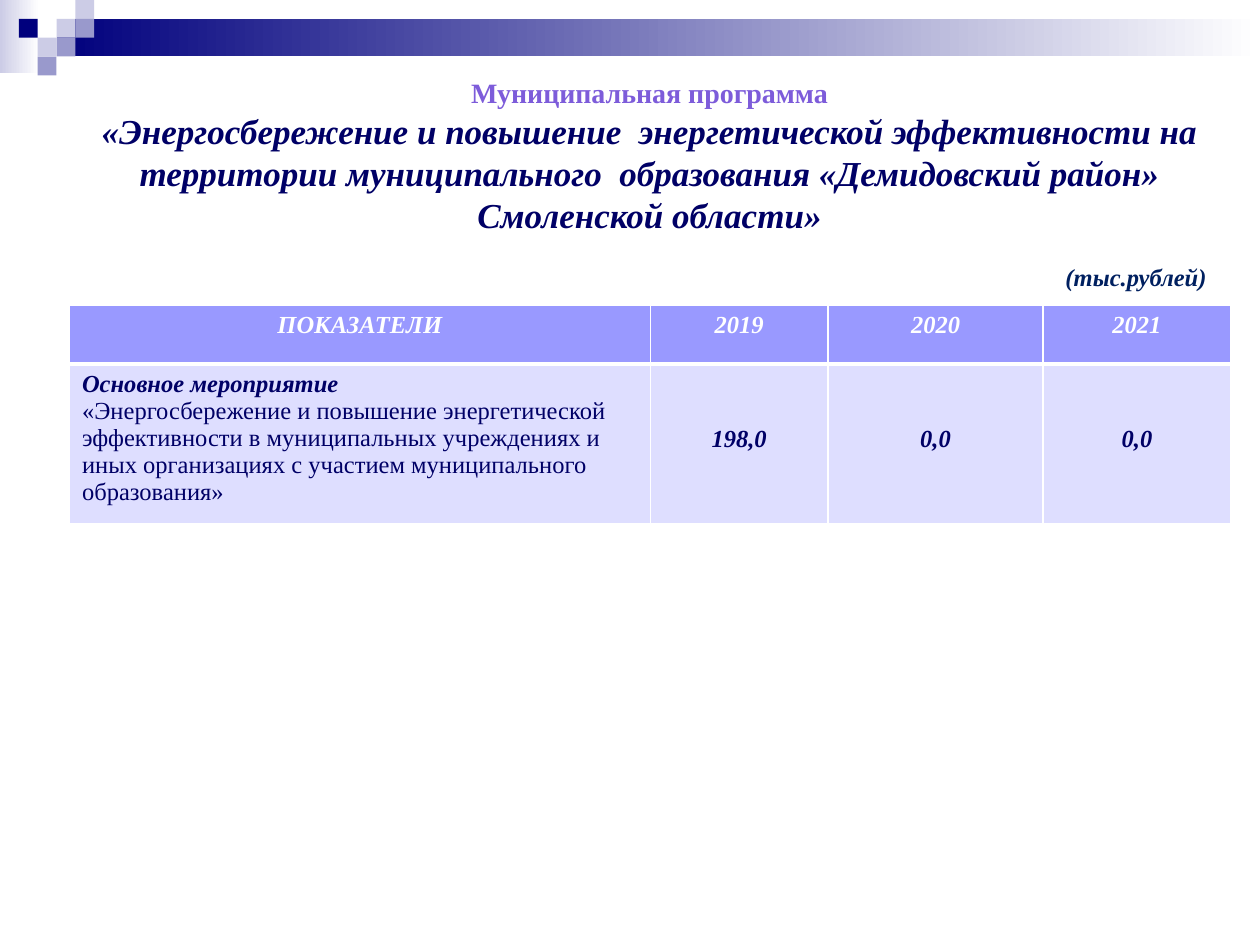
from dataclasses import dataclass

from lxml.etree import SubElement
from pptx import Presentation
from pptx.dml.color import RGBColor as Rgb
from pptx.enum.shapes import MSO_SHAPE as Preset
from pptx.enum.text import MSO_ANCHOR as Anchor, PP_ALIGN as Align
from pptx.oxml.ns import qn
from pptx.shapes.autoshape import Shape
from pptx.slide import Slide
from pptx.table import _Cell as Cell
from pptx.text.text import _Paragraph as Paragraph
from pptx.util import Cm, Pt


@dataclass(frozen=True)
class Theme:
    font: str = "Times New Roman"
    navy: str = "00007D"
    lavender: str = "CCCCE6"
    periwinkle: str = "9999CC"
    white: str = "FFFFFF"
    violet: str = "7D5CDA"
    ink: str = "000066"
    unit_ink: str = "002060"
    header_fill: str = "9999FF"
    body_fill: str = "DEDEFF"
    program_size: int = 16
    title_size: int = 20
    text_size: int = 14


@dataclass(frozen=True)
class Style:
    size: int
    color: str
    bold: bool = True
    italic: bool = True
    align: Align = Align.CENTER


@dataclass(frozen=True)
class Box:
    left: float
    top: float
    width: float
    height: float

    def lengths(self) -> tuple[Cm, Cm, Cm, Cm]:
        return Cm(self.left), Cm(self.top), Cm(self.width), Cm(self.height)


@dataclass(frozen=True)
class Tile:
    column: int
    row: int
    color: str


THEME = Theme()
TILE_SIDE = 0.38
BANDS = (
    (Box(0, 0, 0.79, 1.47), THEME.lavender),
    (Box(1.14, 0.38, 24.26, 0.76), THEME.navy),
)
TILES = (
    Tile(3, 1, THEME.lavender),
    Tile(4, 0, THEME.lavender),
    Tile(4, 1, THEME.periwinkle),
    Tile(2, 2, THEME.lavender),
    Tile(1, 1, THEME.navy),
    Tile(3, 2, THEME.periwinkle),
    Tile(2, 3, THEME.periwinkle),
)
HEADING = Style(THEME.text_size, THEME.white)
VALUE = Style(THEME.text_size, THEME.ink)
MEASURE = Style(THEME.text_size, THEME.ink, align=Align.LEFT)
DETAIL = Style(THEME.text_size, THEME.ink, bold=False, italic=False, align=Align.LEFT)
TITLE_LINES = (
    ("Муниципальная программа", Style(THEME.program_size, THEME.violet, italic=False)),
    ("«Энергосбережение и повышение  энергетической эффективности на территории "
     "муниципального  образования «Демидовский район» Смоленской области»",
     Style(THEME.title_size, THEME.ink)),
)
UNIT_LINES = (
    ("(тыс.рублей)", Style(THEME.text_size, THEME.unit_ink, align=Align.LEFT)),
)
MEASURE_LINES = (
    ("Основное мероприятие", MEASURE),
    ("«Энергосбережение и повышение энергетической эффективности в муниципальных "
     "учреждениях и иных организациях с участием муниципального образования»", DETAIL),
)
HEADINGS = ("ПОКАЗАТЕЛИ", "2019", "2020", "2021")
VALUES = ("198,0", "0,0", "0,0")
COLUMN_WIDTHS = (11.71, 3.58, 4.34, 3.78)
ROW_HEIGHTS = (1.19, 3.18)

Lines = tuple[tuple[str, Style], ...]


def draw_rectangle(slide: Slide, box: Box) -> Shape:
    rectangle = slide.shapes.add_shape(Preset.RECTANGLE, *box.lengths())
    rectangle.shadow.inherit = False
    rectangle.line.fill.background()
    return rectangle


def draw_band(slide: Slide, box: Box, start: str) -> None:
    fill = draw_rectangle(slide, box).fill
    fill.gradient()
    fill.gradient_angle = 0
    for stop, position, color in zip(fill.gradient_stops, (0, 1), (start, THEME.white)):
        stop.position = position
        stop.color.rgb = Rgb.from_string(color)


def draw_tile(slide: Slide, tile: Tile) -> None:
    box = Box(tile.column * TILE_SIDE, tile.row * TILE_SIDE, TILE_SIDE, TILE_SIDE)
    fill = draw_rectangle(slide, box).fill
    fill.solid()
    fill.fore_color.rgb = Rgb.from_string(tile.color)


def write_line(paragraph: Paragraph, text: str, style: Style) -> None:
    paragraph.text = text
    paragraph.alignment = style.align
    for run in paragraph.runs:
        run.font.name = THEME.font
        run.font.size = Pt(style.size)
        run.font.bold = style.bold
        run.font.italic = style.italic
        run.font.color.rgb = Rgb.from_string(style.color)


def write_lines(holder: Shape | Cell, lines: Lines) -> None:
    frame = holder.text_frame
    for index, (text, style) in enumerate(lines):
        paragraph = frame.add_paragraph() if index else frame.paragraphs[0]
        write_line(paragraph, text, style)


def draw_text(slide: Slide, box: Box, lines: Lines, wrap: bool) -> None:
    caption = slide.shapes.add_textbox(*box.lengths())
    caption.text_frame.word_wrap = wrap
    write_lines(caption, lines)


def draw_cell(cell: Cell, lines: Lines, fill: str, bottom_width: int) -> None:
    write_lines(cell, lines)
    properties = cell._tc.get_or_add_tcPr()
    for side, width in (("L", 1), ("R", 1), ("T", 1), ("B", bottom_width)):
        border = SubElement(properties, qn(f"a:ln{side}"), w=str(Pt(width)))
        paint = SubElement(border, qn("a:solidFill"))
        SubElement(paint, qn("a:srgbClr"), val=THEME.white)
    cell.fill.solid()
    cell.fill.fore_color.rgb = Rgb.from_string(fill)


def draw_indicators(slide: Slide, left: float, top: float) -> None:
    box = Box(left, top, sum(COLUMN_WIDTHS), sum(ROW_HEIGHTS))
    table = slide.shapes.add_table(len(ROW_HEIGHTS), len(COLUMN_WIDTHS), *box.lengths()).table
    table.horz_banding = False
    for column, width in zip(table.columns, COLUMN_WIDTHS):
        column.width = Cm(width)
    for row, height in zip(table.rows, ROW_HEIGHTS):
        row.height = Cm(height)
    for index, heading in enumerate(HEADINGS):
        draw_cell(table.cell(0, index), ((heading, HEADING),), THEME.header_fill, 3)
    draw_cell(table.cell(1, 0), MEASURE_LINES, THEME.body_fill, 1)
    for index, value in enumerate(VALUES, start=1):
        cell = table.cell(1, index)
        draw_cell(cell, ((value, VALUE),), THEME.body_fill, 1)
        cell.vertical_anchor = Anchor.MIDDLE
        cell.margin_bottom = Cm(0.33)


def main() -> None:
    deck = Presentation()
    deck.slide_width, deck.slide_height = Cm(25.4), Cm(19.05)
    slide = deck.slides.add_slide(deck.slide_layouts[6])
    for box, start in BANDS:
        draw_band(slide, box, start)
    for tile in TILES:
        draw_tile(slide, tile)
    draw_text(slide, Box(0.79, 1.4, 24.61, 3.5), TITLE_LINES, wrap=True)
    draw_indicators(slide, 1.4, 6.15)
    draw_text(slide, Box(21.23, 5.16, 3.38, 0.86), UNIT_LINES, wrap=False)
    deck.save("out.pptx")


if __name__ == "__main__":
    main()
